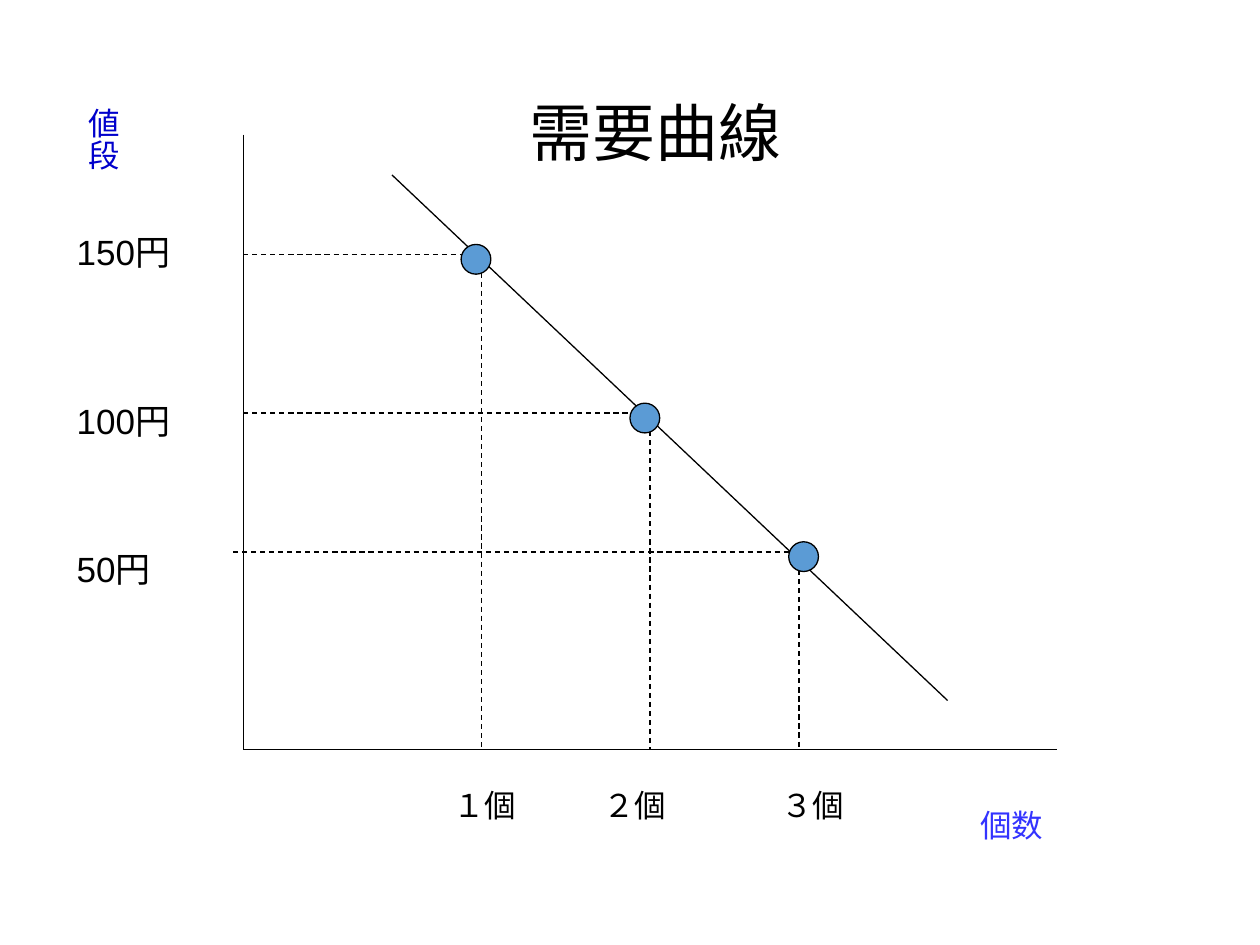
import pptx
import pptx.dml.color
import pptx.enum.dml
import pptx.enum.shapes
import pptx.enum.text
import pptx.util
from lxml import etree
from pptx.oxml import ns

Pt = pptx.util.Pt
RGB = pptx.dml.color.RGBColor.from_string
THEME = {
    "font": "Arial",
    "ink": "000000", "dot": "5B9BD5", "count": "3333FF", "price": "0000CC",
    "title": 36, "value": 20, "label": 18, "line": 0.75,
}

deck = pptx.Presentation()
deck.slide_width, deck.slide_height = Pt(720), Pt(540)
slide = deck.slides.add_slide(deck.slide_layouts[6])
shapes = slide.shapes


def add_line(x1, y1, x2, y2, dash=False):
    line = shapes.add_connector(
        pptx.enum.shapes.MSO_CONNECTOR.STRAIGHT, Pt(x1), Pt(y1), Pt(x2), Pt(y2))
    line.line.color.rgb = RGB(THEME["ink"])
    line.line.width = Pt(THEME["line"])
    if dash:
        line.line.dash_style = pptx.enum.dml.MSO_LINE.DASH
    etree.SubElement(line._element.spPr, ns.qn("a:effectLst"))


def add_text(text, x, y, w, h, size, color="ink", center=False, tall=False):
    frame = shapes.add_textbox(Pt(x), Pt(y), Pt(w), Pt(h)).text_frame
    frame.word_wrap = True
    frame.auto_size = pptx.enum.text.MSO_AUTO_SIZE.SHAPE_TO_FIT_TEXT
    if tall:
        frame._txBody.bodyPr.set("vert", "eaVert")
    para = frame.paragraphs[0]
    if center:
        para.alignment = pptx.enum.text.PP_ALIGN.CENTER
    run = para.add_run()
    run.text = text
    run.font.name = THEME["font"]
    run.font.size = Pt(THEME[size])
    run.font.color.rgb = RGB(THEME[color])


# Axes and their names
left, base = 139, 428.5
add_line(left, 77, left, base)
add_line(left, base, 604, base)
add_text("個数", 553, 457, 124.5, 29, "label", "count")
add_text("値段", 36.7, 54.7, 36.7, 124.5, "label", "price", tall=True)

# Demand curve
add_line(224, 100, 541.5, 400.3)

# Guides: start x, end x, drop x, level
guides = [
    (left, 269.3, 275, 145.5),
    (left, 371.5, 371.5, 236),
    (133.2, 450.7, 456.5, 315.4),
]
for start, end, drop, level in guides:
    add_line(start, level, end, level, dash=True)
    add_line(drop, level, drop, base, dash=True)

# Counts below the axis
for text, x, w in [("１個", 252, 73.4), ("２個", 337.7, 85), ("３個", 439.2, 73.4)]:
    add_text(text, x, 445.7, w, 29, "label")

# Prices beside the axis
for text, y, w in [("150円", 128.2, 85), ("100円", 224.6, 85), ("50円", 309.6, 96.5)]:
    add_text(text, 36.7, y, w, 31, "value")

# Title
add_text("需要曲線", 263.5, 49.7, 221.8, 50.4, "title", center=True)

# Points on the curve
for x, y in [(263.5, 139.7), (360, 230.4), (450.7, 309.6)]:
    dot = shapes.add_shape(
        pptx.enum.shapes.MSO_SHAPE.OVAL, Pt(x), Pt(y), Pt(17), Pt(17))
    dot.shadow.inherit = False
    dot.fill.solid()
    dot.fill.fore_color.rgb = RGB(THEME["dot"])
    dot.line.color.rgb = RGB(THEME["ink"])
    dot.line.width = Pt(THEME["line"])

deck.save("out.pptx")
